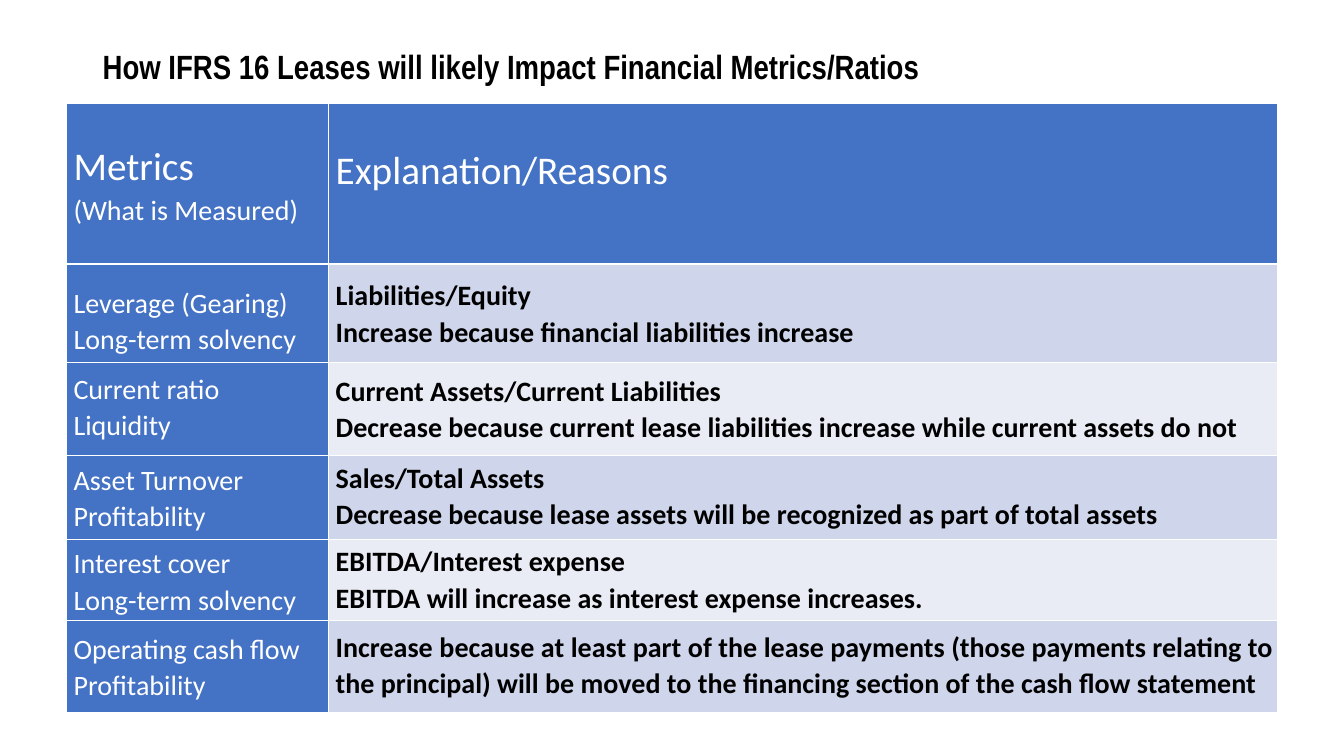
"""Build a slide with a table of how IFRS 16 leases affect financial metrics."""
from lxml.etree import SubElement
from pptx import Presentation
from pptx.dml.color import RGBColor
from pptx.enum.text import MSO_ANCHOR as Anchor, PP_ALIGN as Align
from pptx.oxml.ns import qn
from pptx.util import Inches, Pt

BLUE, WHITE, BLACK = "4472C4", "FFFFFF", "000000"
BANDS = ["CFD5EA", "E9EBF5"]
LINE_FACTOR = 1.3


def color(hex_string):
    return RGBColor.from_string(hex_string)


def fill_cell(cell, lines, sizes, lead, fill, font_color, bold, align):
    cell.margin_left, cell.margin_right = Inches(0.07), Inches(0.04)
    cell.margin_top, cell.margin_bottom = Pt(lead * LINE_FACTOR), 0
    cell.vertical_anchor = Anchor.TOP
    properties = cell._tc.get_or_add_tcPr()
    for side in ("lnL", "lnR", "lnT", "lnB"):
        border = SubElement(properties, qn(f"a:{side}"), w=str(Pt(1)))
        SubElement(SubElement(border, qn("a:solidFill")), qn("a:srgbClr"), val=WHITE)
    cell.fill.solid()
    cell.fill.fore_color.rgb = color(fill)
    cell.text = "\n".join(lines)
    for paragraph, size in zip(cell.text_frame.paragraphs, sizes):
        paragraph.alignment = align
        paragraph.line_spacing = 1.07
        font = paragraph.font
        font.name, font.size, font.bold = "Calibri", Pt(size), bold
        font.color.rgb = color(font_color)


presentation = Presentation()
presentation.slide_width, presentation.slide_height = Inches(13.33), Inches(7.5)
slide = presentation.slides.add_slide(presentation.slide_layouts[6])

title = slide.shapes.add_textbox(Inches(0.92), Inches(0.35), Inches(11.5), Inches(0.67))
title.text_frame.word_wrap = True
title.text_frame.vertical_anchor = Anchor.MIDDLE
heading = title.text_frame.paragraphs[0]
heading.text = "How IFRS 16 Leases will likely Impact Financial Metrics/Ratios"
heading.line_spacing = 0.9
heading.font.name, heading.font.size, heading.font.bold = "Arial Narrow", Pt(24), True
heading.font.color.rgb = color(BLACK)

# Each row: height, metric lines, metric lead, explanation lines, explanation lead
metric_rows = [
    (0.98, ["Leverage (Gearing)", "Long-term solvency"], 11,
     ["Liabilities/Equity", "Increase because financial liabilities increase"], 7),
    (0.92, ["Current ratio", "Liquidity"], 4,
     ["Current Assets/Current Liabilities",
      "Decrease because current lease liabilities increase while current assets do not"], 5),
    (0.83, ["Asset Turnover", "Profitability"], 3,
     ["Sales/Total Assets",
      "Decrease because lease assets will be recognized as part of total assets"], 2),
    (0.81, ["Interest cover", "Long-term solvency"], 3,
     ["EBITDA/Interest expense", "EBITDA will increase as interest expense increases."], 2),
    (0.91, ["Operating cash flow", "Profitability"], 5,
     ["Increase because at least part of the lease payments (those payments relating to "
      "the principal) will be moved to the financing section of the cash flow statement"], 4),
]
heights = [1.59] + [row[0] for row in metric_rows]
widths = [2.6, 9.41]
table = slide.shapes.add_table(len(heights), len(widths), Inches(0.66), Inches(1.03),
                               Inches(sum(widths)), Inches(sum(heights))).table
table.first_row = False
for column, width in zip(table.columns, widths):
    column.width = Inches(width)
for row, height in zip(table.rows, heights):
    row.height = Inches(height)

fill_cell(table.cell(0, 0), ["Metrics", "(What is Measured)"], [28, 20], 20,
          BLUE, WHITE, False, Align.LEFT)
fill_cell(table.cell(0, 1), ["Explanation/Reasons"], [28], 22,
          BLUE, WHITE, False, Align.JUSTIFY)
for index, (_, metric, metric_lead, reasons, reasons_lead) in enumerate(metric_rows):
    fill_cell(table.cell(index + 1, 0), metric, [20, 20], metric_lead,
              BLUE, WHITE, False, Align.JUSTIFY)
    fill_cell(table.cell(index + 1, 1), reasons, [20, 20], reasons_lead,
              BANDS[index % 2], BLACK, True, Align.JUSTIFY)

presentation.save("out.pptx")
